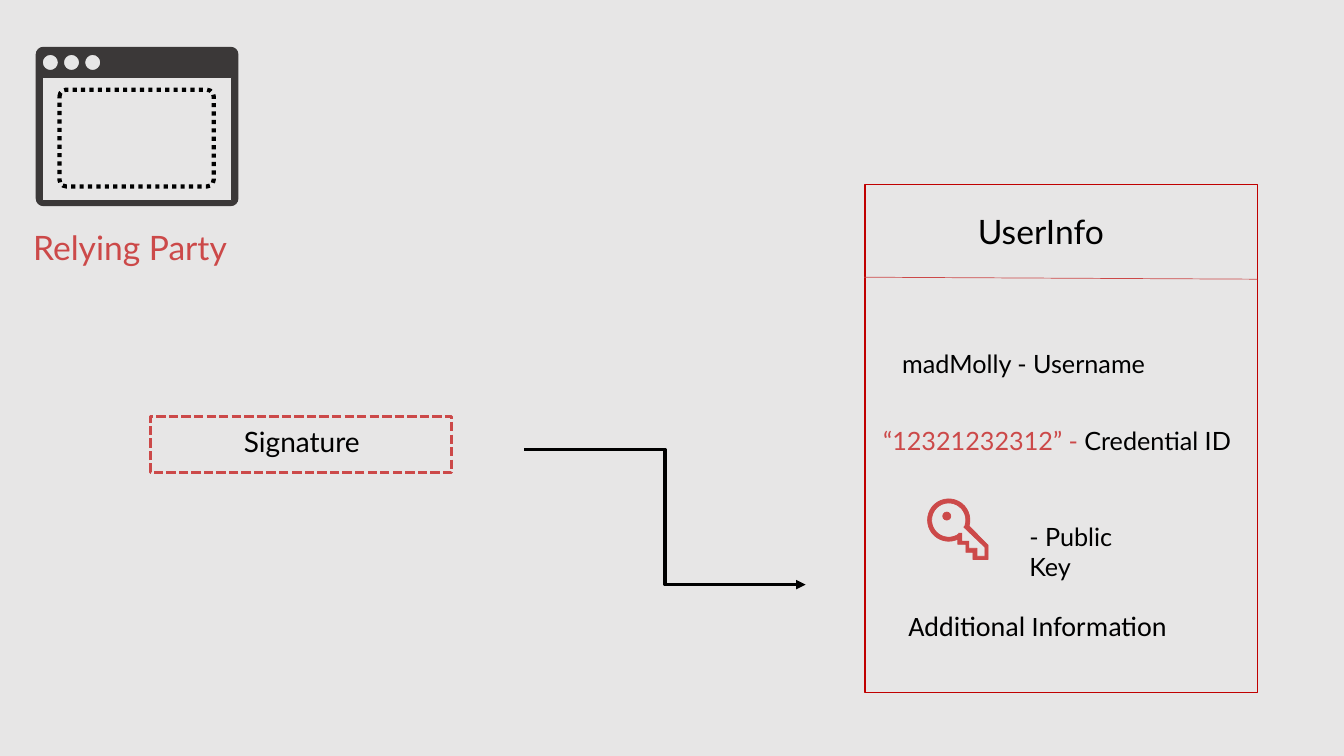
from math import ceil, cos, radians, sin, tan

from pptx import Presentation
from pptx.dml.color import RGBColor
from pptx.enum.dml import MSO_LINE
from pptx.enum.shapes import MSO_CONNECTOR, MSO_SHAPE
from pptx.oxml.ns import qn
from pptx.util import Pt
from lxml.etree import SubElement

PX = 9144
GREY = RGBColor(0xE7, 0xE6, 0xE6)
CHARCOAL = RGBColor(0x3B, 0x38, 0x38)
BLACK = RGBColor(0, 0, 0)
RED = RGBColor(0xCC, 0x49, 0x49)
DARK_RED = RGBColor(0xC0, 0, 0)


def lengths(*values):
    """Turn px into EMU."""
    return [round(value * PX) for value in values]


def style(shape, fill, line, weight, dash=None):
    """Give a shape its fill and outline, without shadow."""
    shape.shadow.inherit = False
    if fill is None:
        shape.fill.background()
    else:
        shape.fill.solid()
        shape.fill.fore_color.rgb = fill
    shape.line.color.rgb = line
    shape.line.width = Pt(weight)
    if dash:
        shape.line.dash_style = dash


def add_preset(page, kind, box, fill, line, weight, dash=None):
    """Add a styled preset shape in a box."""
    shape = page.shapes.add_shape(kind, *lengths(*box))
    style(shape, fill, line, weight, dash)
    return shape


def add_text(page, box, spans, size, font="Lato", right_margin=0):
    """Add one paragraph made of (text, colour) spans."""
    frame = page.shapes.add_textbox(*lengths(*box)).text_frame
    frame.word_wrap = True
    frame.margin_right = right_margin * PX
    for text, colour in spans:
        span = frame.paragraphs[0].add_run()
        span.text = text
        span.font.name = font
        span.font.size = Pt(size)
        span.font.color.rgb = colour


def add_line(page, kind, ends, colour, weight):
    """Add a connector without shadow."""
    line = page.shapes.add_connector(kind, *lengths(*ends))
    line.line.color.rgb = colour
    line.line.width = Pt(weight)
    SubElement(line._element.spPr, qn("a:effectLst"))
    return line


def corners(*points):
    """List straight segments, one end point each."""
    return [[point] for point in points]


def arc(x, y, radius, start=0, end=360):
    """List a segment to the start of an arc and the Bezier curves along it."""
    count = ceil(abs(end - start) / 90)
    step = radians(end - start) / count
    pull = 4 / 3 * tan(step / 4)

    def spot(angle, shift=0):
        return (x + radius * (cos(angle) - shift * sin(angle)),
                y + radius * (sin(angle) + shift * cos(angle)))

    angles = [radians(start) + step * index for index in range(count)]
    return [[spot(radians(start))]] + [
        [spot(angle, pull), spot(angle + step, -pull), spot(angle + step)]
        for angle in angles
    ]


def add_outline(page, box, contours, colour, weight):
    """Add a freeform in a box from contours relative to it; inner ones are holes."""
    left, top, width, height = lengths(*box)
    builder = page.shapes.build_freeform(left, top)
    builder.add_line_segments([(left + width, top + height)])
    shape = builder.convert_to_shape()
    outline = shape._element.spPr.find(".//" + qn("a:path"))
    del outline[:]
    for contour in contours:
        for index, segment in enumerate(contour):
            tag = "a:cubicBezTo" if len(segment) == 3 else "a:lnTo"
            command = SubElement(outline, qn(tag if index else "a:moveTo"))
            for point in segment:
                across, down = lengths(*point)
                SubElement(command, qn("a:pt"), x=str(across), y=str(down))
        SubElement(outline, qn("a:close"))
    style(shape, colour, colour, weight)


def add_relying_party(page, left, top):
    """Draw the browser window and its caption."""
    width, height, corner = 200, 157, 7
    frame = (
        arc(corner, corner, corner, 180, 270)
        + arc(width - corner, corner, corner, 270, 360)
        + arc(width - corner, height - corner, corner, 0, 90)
        + arc(corner, height - corner, corner, 90, 180)
    )
    screen = corners((6, 30), (6, height - 5), (width - 6, height - 5), (width - 6, 30))
    buttons = [arc(14 + 21 * index, 15, 8) for index in range(3)]
    add_outline(page, (left, top, width, height), [screen, *buttons, frame],
                CHARCOAL, 0.75)
    content = add_preset(page, MSO_SHAPE.ROUNDED_RECTANGLE,
                         (left + 23, top + 42, 153, 96), None, BLACK, 3,
                         MSO_LINE.ROUND_DOT)
    content.adjustments[0] = 0.07
    add_text(page, (left - 13, top + 173, 227, 50), [("Relying Party", RED)], 24)


def add_key(page, left, top):
    """Draw the key icon."""
    outer = (corners((60, 60), (45, 60), (45, 53), (38, 53), (38, 45), (30, 45), (30, 39))
             + arc(21, 21, 21, 62, 376) + corners((60, 46)))
    inner = (corners((49, 57), (57, 57), (57, 48), (36, 28))
             + arc(21, 21, 17, 380, 53)
             + corners((31, 34), (34, 34), (34, 42), (41, 42), (41, 49), (49, 49)))
    add_outline(page, (left, top, 60, 60), [outer, inner], RED, 0.5)
    add_preset(page, MSO_SHAPE.OVAL, (left + 15, top + 13, 8, 8), RED, RED, 0.5)


def add_user_info(page, left, top):
    """Draw the card of stored user data."""
    width, height = 389, 504
    add_preset(page, MSO_SHAPE.RECTANGLE, (left, top, width, height),
               GREY, DARK_RED, 1)
    add_text(page, (left + 8, top + 234, 381, 71),
             [("“12321232312” -", RED), (" Credential ID", BLACK)], 18)
    add_line(page, MSO_CONNECTOR.STRAIGHT,
             (left - 1, top + 92, left + width, top + 94), RED, 0.5)
    add_text(page, (left + 102, top + 21, 150, 50), [("UserInfo", BLACK)], 24)
    add_key(page, left + 62, top + 312)
    add_text(page, (left + 33, top + 416, 279, 44),
             [("Additional Information", BLACK)], 20, "Calibri")
    add_text(page, (left + 153, top + 329, 149, 40), [("- Public Key", BLACK)], 18,
             right_margin=20)
    add_text(page, (left + 27, top + 158, 263, 40),
             [("madMolly - Username", BLACK)], 18)


def add_signature(page, left, top):
    """Draw the dashed signature box and the arrow to the card."""
    arrow = add_line(page, MSO_CONNECTOR.ELBOW,
                     (left + 371, top + 33, left + 650, top + 167), BLACK, 2.25)
    SubElement(arrow.line._get_or_add_ln(), qn("a:tailEnd"), type="triangle")
    add_preset(page, MSO_SHAPE.RECTANGLE, (left, top, 299, 56), None, RED, 2.25,
               MSO_LINE.SQUARE_DOT)
    add_text(page, (left + 83, top + 3, 232, 44), [("Signature", BLACK)], 20)


def main():
    """Build and save the slide."""
    deck = Presentation()
    deck.slide_width, deck.slide_height = lengths(1333, 750)
    page = deck.slides.add_slide(deck.slide_layouts[6])
    page.background.fill.solid()
    page.background.fill.fore_color.rgb = GREY
    add_relying_party(page, 36, 47)
    add_user_info(page, 858, 183)
    add_signature(page, 149, 413)
    deck.save("out.pptx")


if __name__ == "__main__":
    main()
